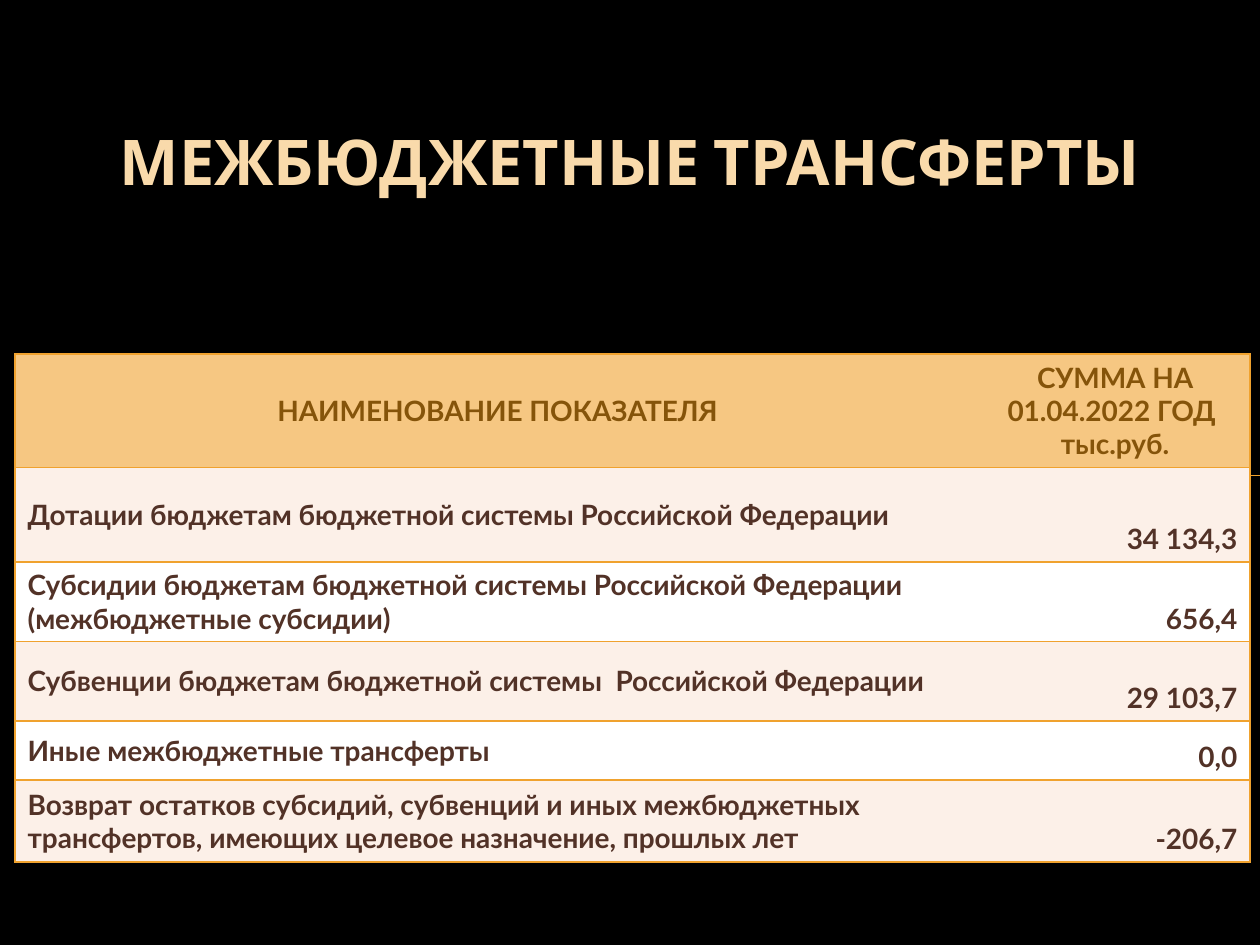
"""Build the slide on interbudget transfers: a title, a rule and a table of amounts."""
from typing import NamedTuple

from lxml.etree import SubElement
from pptx import Presentation
from pptx.dml.color import RGBColor
from pptx.enum.shapes import MSO_CONNECTOR as Connector
from pptx.enum.text import MSO_ANCHOR as Anchor, PP_ALIGN as Align
from pptx.oxml.ns import qn
from pptx.util import Inches, Pt

BLACK = RGBColor(0x00, 0x00, 0x00)
WHITE = RGBColor(0xFF, 0xFF, 0xFF)
AMBER = RGBColor(0xF0, 0xA2, 0x2E)
SAND = RGBColor(0xF9, 0xDA, 0xAB)
HEADER_FILL = RGBColor(0xF6, 0xC7, 0x82)
HEADER_INK = RGBColor(0x85, 0x54, 0x0A)
BAND = RGBColor(0xFC, 0xF0, 0xE8)
BROWN = RGBColor(0x52, 0x32, 0x27)

WIDTH, HEIGHT = Inches(10), Inches(7.5)
COLUMNS = (7.66, 2.14)
HEADER_HEIGHT = 0.9


class Transfer(NamedTuple):
    name: str
    amount: str
    height: float


class CellLook(NamedTuple):
    fill: RGBColor
    ink: RGBColor
    align: Align
    anchor: Anchor


HEADINGS = (("НАИМЕНОВАНИЕ ПОКАЗАТЕЛЯ",), ("СУММА НА 01.04.2022 ГОД ", "тыс.руб."))
TRANSFERS = (
    Transfer("Дотации бюджетам бюджетной системы Российской Федерации", "34 134,3", 0.75),
    Transfer("Субсидии бюджетам бюджетной системы Российской Федерации "
             "(межбюджетные субсидии)", "656,4", 0.63),
    Transfer("Субвенции бюджетам бюджетной системы  Российской Федерации", "29 103,7", 0.63),
    Transfer("Иные межбюджетные трансферты", "0,0", 0.47),
    Transfer("Возврат остатков субсидий, субвенций и иных межбюджетных трансфертов, "
             "имеющих целевое назначение, прошлых лет", "-206,7", 0.65),
)


def add_run(paragraph, words: str, font: str, size: float, ink: RGBColor) -> None:
    run = paragraph.add_run()
    run.text = words
    run.font.name, run.font.size, run.font.bold = font, Pt(size), True
    run.font.color.rgb = ink


def set_borders(cell, visible: str) -> None:
    properties = cell._tc.get_or_add_tcPr()
    for side in "LRTB":
        border = SubElement(properties, qn(f"a:ln{side}"), w=str(Pt(1)))
        if side in visible:
            SubElement(SubElement(border, qn("a:solidFill")), qn("a:srgbClr"), val=str(AMBER))
        else:
            SubElement(border, qn("a:noFill"))


def fill_cell(cell, lines: tuple[str, ...], look: CellLook, borders: str) -> None:
    set_borders(cell, borders)
    cell.fill.solid()
    cell.fill.fore_color.rgb = look.fill
    cell.vertical_anchor = look.anchor
    frame = cell.text_frame
    for index, line in enumerate(lines):
        paragraph = frame.add_paragraph() if index else frame.paragraphs[0]
        paragraph.alignment = look.align
        add_run(paragraph, line, "Lato", 16, look.ink)


def add_rule(slide) -> None:
    level = round(HEIGHT * 0.503)
    rule = slide.shapes.add_connector(Connector.STRAIGHT, round(WIDTH * 0.056), level, WIDTH, level)
    rule.line.color.rgb = AMBER
    rule.line.width = Pt(0.75)
    SubElement(rule._element.spPr, qn("a:effectLst"))


def place_title(slide) -> None:
    title = slide.shapes.title
    title.left, title.top = 0, Inches(0.92)
    title.width, title.height = WIDTH, Inches(1.97)
    title.text_frame.vertical_anchor = Anchor.TOP
    heading = title.text_frame.paragraphs[0]
    heading.alignment = Align.CENTER
    add_run(heading, "МЕЖБЮДЖЕТНЫЕ ТРАНСФЕРТЫ", "Cabin", 36, SAND)


def add_transfers(slide) -> None:
    heights = (HEADER_HEIGHT, *(transfer.height for transfer in TRANSFERS))
    table = slide.shapes.add_table(
        len(heights), len(COLUMNS), Inches(0.12), Inches(2.81),
        Inches(sum(COLUMNS)), Inches(sum(heights))).table
    for column, width in zip(table.columns, COLUMNS):
        column.width = Inches(width)
    for row, height in zip(table.rows, heights):
        row.height = Inches(height)
    outer_borders = ("LTB", "RTB")
    header = CellLook(HEADER_FILL, HEADER_INK, Align.CENTER, Anchor.MIDDLE)
    for column, (lines, borders) in enumerate(zip(HEADINGS, outer_borders)):
        fill_cell(table.cell(0, column), lines, header, borders)
    for row, transfer in enumerate(TRANSFERS, 1):
        fill = BAND if row % 2 else WHITE
        looks = (CellLook(fill, BROWN, Align.LEFT, Anchor.MIDDLE),
                 CellLook(fill, BROWN, Align.RIGHT, Anchor.BOTTOM))
        entries = (transfer.name, transfer.amount)
        for column, (entry, look, borders) in enumerate(zip(entries, looks, outer_borders)):
            fill_cell(table.cell(row, column), (entry,), look, borders)


def main() -> None:
    deck = Presentation()
    deck.slide_width, deck.slide_height = WIDTH, HEIGHT
    slide = deck.slides.add_slide(deck.slide_layouts[5])
    slide.background.fill.solid()
    slide.background.fill.fore_color.rgb = BLACK
    add_rule(slide)
    place_title(slide)
    add_transfers(slide)
    deck.save("out.pptx")


if __name__ == "__main__":
    main()
